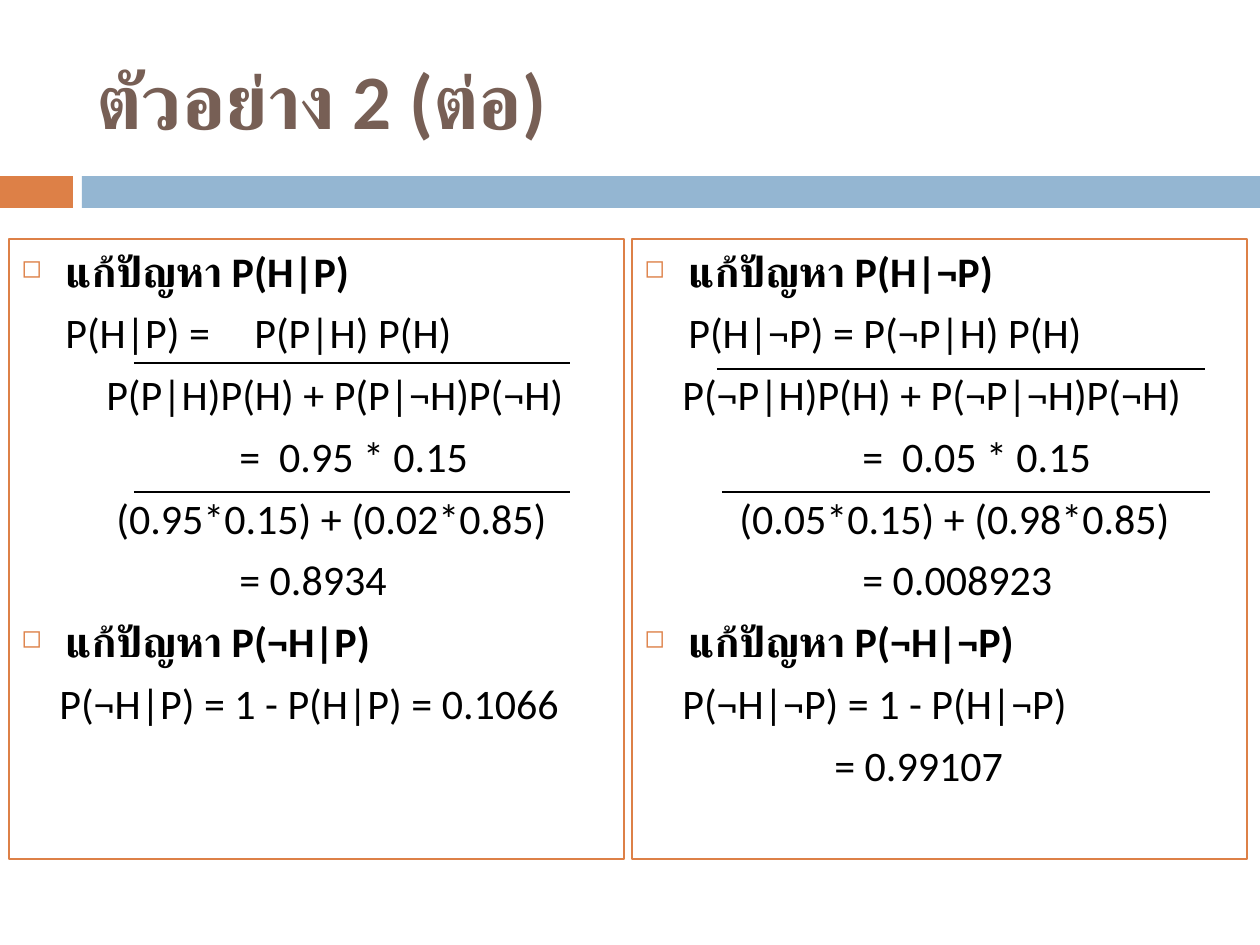
from lxml import etree
from pptx import Presentation
from pptx import util as u
from pptx.dml import color
from pptx.enum import shapes, text
from pptx.oxml import ns

SCALE = 914400 / 126
FONT = "Calibri"
ORANGE, BLUE, BROWN, BLACK, WHITE = "DD8047", "94B6D2", "775F55", "000000", "FFFFFF"
HANGING = 44

LEFT_ROWS = [
    (None, "แก้ปัญหา P(H|P)"),
    (44, "P(H|P) =\tP(P|H) P(H)"),
    (85, "P(P|H)P(H) + P(P|¬H)P(¬H)"),
    (218, "=  0.95 * 0.15"),
    (95, "(0.95*0.15) + (0.02*0.85)"),
    (218, "= 0.8934"),
    (None, "แก้ปัญหา P(¬H|P)"),
    (38, "P(¬H|P) = 1 - P(H|P) = 0.1066"),
]
RIGHT_ROWS = [
    (None, "แก้ปัญหา P(H|¬P)"),
    (44, "P(H|¬P) = P(¬P|H) P(H)"),
    (38, "P(¬P|H)P(H) + P(¬P|¬H)P(¬H)"),
    (218, "=  0.05 * 0.15"),
    (95, "(0.05*0.15) + (0.98*0.85)"),
    (218, "= 0.008923"),
    (None, "แก้ปัญหา P(¬H|¬P)"),
    (38, "P(¬H|¬P) = 1 - P(H|¬P)"),
    (190, "= 0.99107"),
]


def px(length):
    """Turn whole pixels into EMU."""
    return u.Emu(round(length * SCALE))


def paint(target, value):
    """Give a fill or a line a solid colour."""
    target.solid()
    target.fore_color.rgb = color.RGBColor.from_string(value)


def add_element(parent, tag, **attributes):
    """Append a DrawingML element with the given attributes."""
    return etree.SubElement(parent, ns.qn(tag), attributes)


def add_run(paragraph, words, size, value, bold):
    """Add one run in the slide's font."""
    run = paragraph.add_run()
    run.text = words
    run.font.name = FONT
    run.font.size = u.Pt(size)
    run.font.bold = bold
    paint(run.font.fill, value)
    add_element(run.font._element, "a:cs", typeface=FONT)


def add_rectangle(slide, box, fill, outline=None):
    """Add a plain rectangle, outlined if a colour is given."""
    shape = slide.shapes.add_shape(shapes.MSO_SHAPE.RECTANGLE, *map(px, box))
    shape.shadow.inherit = False
    paint(shape.fill, fill)
    if outline:
        paint(shape.line.fill, outline)
        shape.line.width = u.Pt(1.5)
    else:
        shape.line.fill.background()
    return shape


def add_header(slide, box, words):
    """Add the title and the two-coloured band under it."""
    left, top, width, height = box
    title = slide.shapes.add_textbox(*map(px, (left + 84, top + 32, width - 136, 134)))
    frame = title.text_frame
    frame.word_wrap = True
    frame.vertical_anchor = text.MSO_ANCHOR.MIDDLE
    add_run(frame.paragraphs[0], words, 44, BROWN, True)
    band = top + height - 32
    add_rectangle(slide, (left, band, 73, 32), ORANGE)
    add_rectangle(slide, (left + 82, band, width - 82, 32), BLUE)


def format_row(paragraph, indent):
    """Set a bulleted heading, or a formula row with its own indent."""
    paragraph.alignment = text.PP_ALIGN.LEFT
    paragraph.space_before = u.Pt(6.5)
    properties = paragraph._p.get_or_add_pPr()
    heading = indent is None
    properties.set("marL", str(px(HANGING if heading else indent)))
    properties.set("indent", str(px(-HANGING if heading else 0)))
    if heading:
        bullet_color = add_element(properties, "a:buClr")
        add_element(bullet_color, "a:srgbClr", val=ORANGE)
        add_element(properties, "a:buSzPct", val="60000")
        add_element(properties, "a:buChar", char="◻")
    else:
        add_element(properties, "a:buNone")
        tabs = add_element(properties, "a:tabLst")
        add_element(tabs, "a:tab", pos=str(px(227)), algn="l")


def add_solution(slide, box, rows, bars):
    """Add a framed solution with its fraction bars."""
    left, top, width, height = box
    frame = add_rectangle(slide, box, WHITE, ORANGE).text_frame
    frame.word_wrap = True
    frame.vertical_anchor = text.MSO_ANCHOR.TOP
    for index, (indent, words) in enumerate(rows):
        paragraph = frame.add_paragraph() if index else frame.paragraphs[0]
        format_row(paragraph, indent)
        add_run(paragraph, words, 24, BLACK, indent is None)
    for start, level, length in bars:
        x, y = left + start, top + level
        bar = slide.shapes.add_connector(
            shapes.MSO_CONNECTOR.STRAIGHT, px(x), px(y), px(x + length), px(y))
        paint(bar.line.fill, BLACK)
        bar.line.width = u.Pt(1.5)
        add_element(bar._element.spPr, "a:effectLst")


def main():
    """Build and save the slide."""
    presentation = Presentation()
    presentation.slide_width, presentation.slide_height = px(1260), px(945)
    slide = presentation.slides.add_slide(presentation.slide_layouts[6])
    add_header(slide, (0, 0, 1260, 208), "ตัวอย่าง 2 (ต่อ)")
    add_solution(slide, (9, 239, 615, 620), LEFT_ROWS,
                 [(125, 124, 436), (125, 253, 436)])
    add_solution(slide, (632, 239, 615, 620), RIGHT_ROWS,
                 [(85, 130, 488), (90, 253, 488)])
    presentation.save("out.pptx")


if __name__ == "__main__":
    main()
